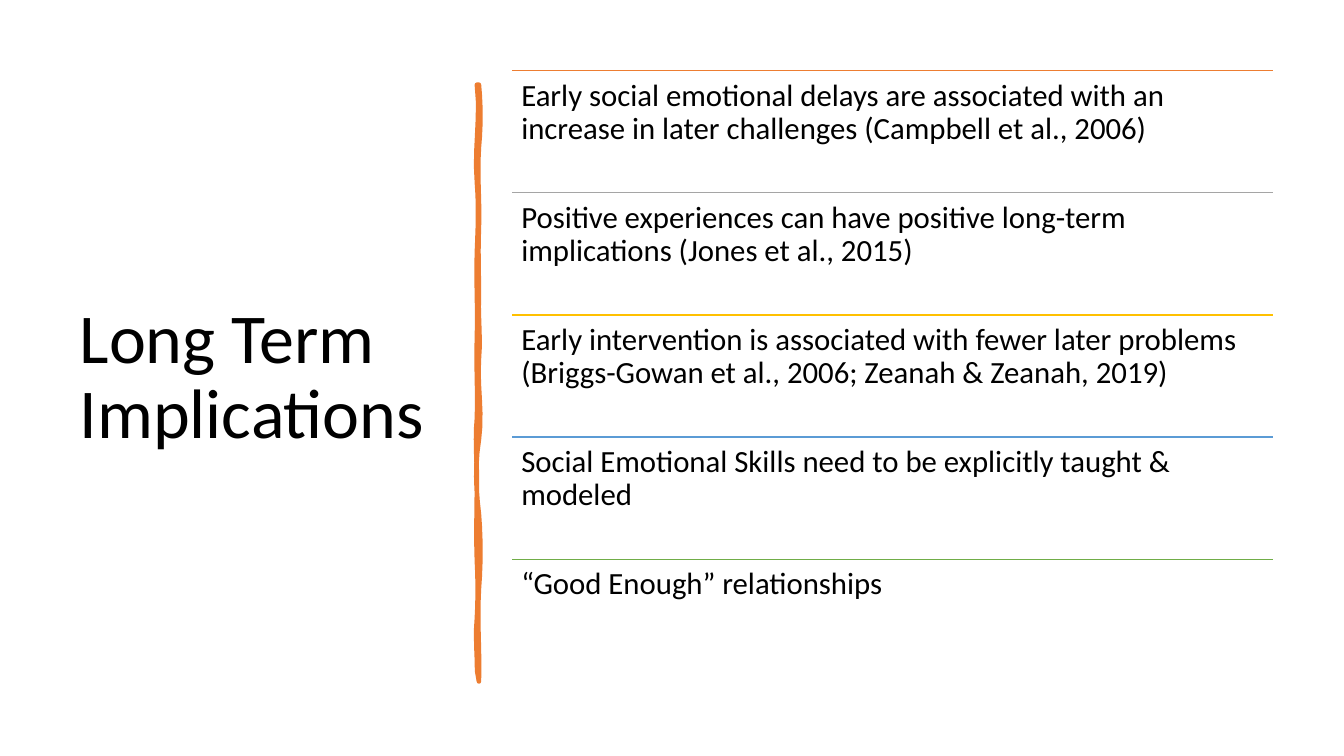
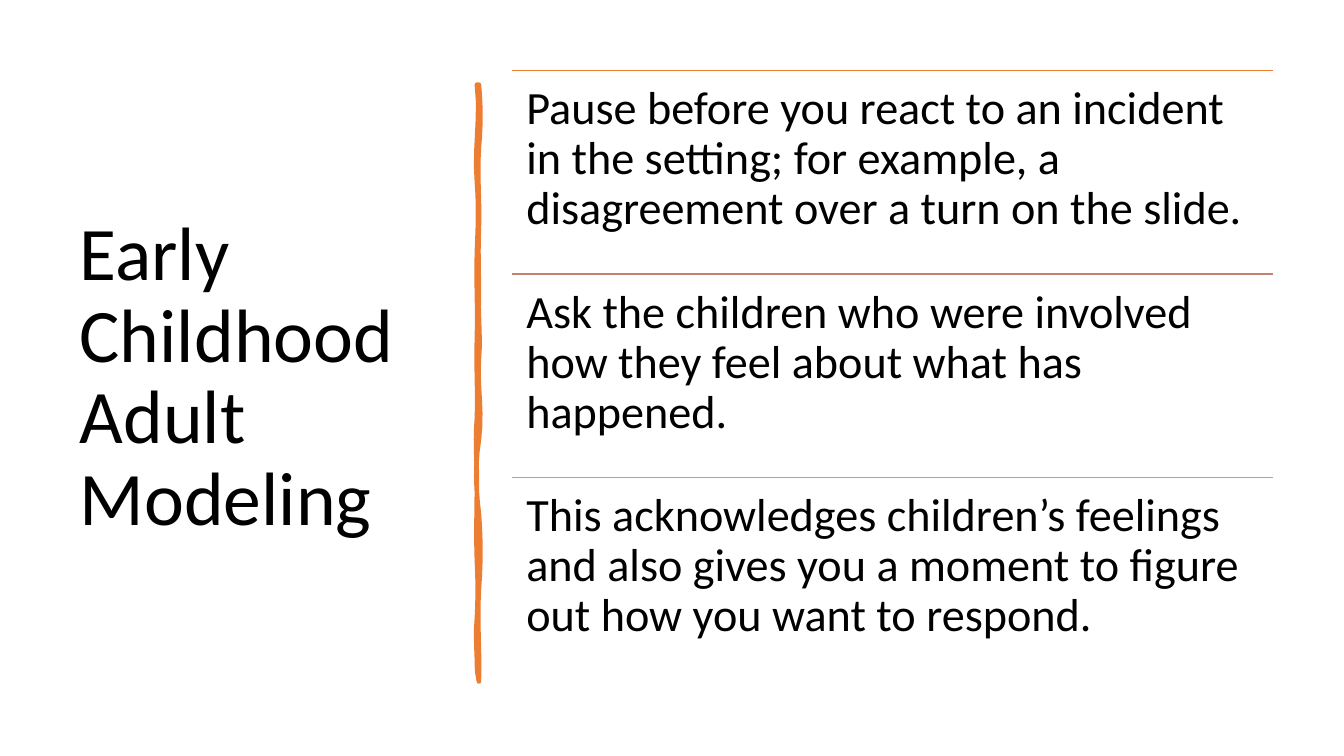
from lxml.etree import SubElement
from pptx import Presentation
from pptx.dml.color import RGBColor
from pptx.enum.shapes import MSO_CONNECTOR
from pptx.enum.text import MSO_ANCHOR, MSO_AUTO_SIZE, PP_ALIGN
from pptx.oxml.ns import qn
from pptx.util import Inches, Pt

FONT = "Calibri"
BLACK = "000000"
ORANGE = "ED7D31"
GRAY = "A5A5A5"
TITLE_BOX = (0.69, 0.7, 3.74, 6.11)
BRUSH_BOX = (4.73, 0.84, 0.02, 5.92)
LIST_BOX = (5.08, 0.7, 7.55, 6.06)
CURVE_STEPS = 6
RIGHT_EDGE = [
    (0.62, 0.02, 0.02), (1.42, -0.02, 0.01), (2.1, -0.01, 0), (2.72, -0.01, 0.02),
    (3.52, -0.02, 0.04), (4.26, -0.04, -0.03), (5, 0.02, 0.02), (5.92, -0.02, 0.01),
]
LEFT_EDGE = [
    (5.29, 0.01, -0.02), (4.73, 0.01, 0.01), (3.93, -0.01, 0), (3.31, 0, -0.02),
    (2.51, 0.01, -0.01), (1.66, 0.01, -0.01), (0.97, 0.01, 0.02), (0, -0.03, 0.04),
]
SLIDES = [
    {
        "title": "Long Term Implications",
        "title_size": 50,
        "text_size": 22,
        "inset": 0.09,
        "rows": [
            (ORANGE, "Early social emotional delays are associated with an increase in later challenges (Campbell et al., 2006)"),
            (GRAY, "Positive experiences can have positive long-term implications (Jones et al., 2015)"),
            ("FFC000", "Early intervention is associated with fewer later problems (Briggs-Gowan et al., 2006; Zeanah & Zeanah, 2019)"),
            ("5B9BD5", "Social Emotional Skills need to be explicitly taught & modeled"),
            ("70AD47", "“Good Enough” relationships"),
        ],
    },
    {
        "title": "Early Childhood Adult Modeling",
        "title_size": 54,
        "text_size": 33,
        "inset": 0.14,
        "rows": [
            (ORANGE, "Pause before you react to an incident in the setting; for example, a disagreement over a turn on the slide."),
            ("C48170", "Ask the children who were involved how they feel about what has happened."),
            (GRAY, "This acknowledges children’s feelings and also gives you a moment to figure out how you want to respond."),
        ],
    },
]


def color(hex_value):
    """Turn a hex string into a colour."""
    return RGBColor.from_string(hex_value)


def set_attributes(target, values):
    """Set each named attribute of the target."""
    for name, value in values.items():
        setattr(target, name, value)


def write_text(shape, text, size, anchor, inset):
    """Write one left-aligned paragraph into a shape."""
    frame = shape.text_frame
    frame.text = text
    set_attributes(frame, {
        "word_wrap": True,
        "auto_size": MSO_AUTO_SIZE.NONE,
        "vertical_anchor": anchor,
        "margin_left": Inches(inset),
        "margin_top": Inches(inset),
        "margin_right": Inches(inset),
        "margin_bottom": Inches(inset),
    })
    paragraph = frame.paragraphs[0]
    set_attributes(paragraph, {"alignment": PP_ALIGN.LEFT, "line_spacing": 0.9})
    font = paragraph.runs[0].font
    set_attributes(font, {"name": FONT, "size": Pt(size)})
    font.color.rgb = color(BLACK)


def place_title(slide, box, text, size):
    """Move the title placeholder into the box and fill it."""
    title = slide.shapes.title
    sides = ("left", "top", "width", "height")
    set_attributes(title, dict(zip(sides, map(Inches, box))))
    write_text(title, text, size, MSO_ANCHOR.MIDDLE, 0.1)


def trace_edge(left, top, start, edge):
    """Return points along a wavy vertical edge of (end, bulge, bulge) curves."""
    points = []
    for end, first_bulge, second_bulge in edge:
        for step in range(1, CURVE_STEPS + 1):
            part = step / CURVE_STEPS
            rest = 1 - part
            bulge = 3 * rest * part * (rest * first_bulge + part * second_bulge)
            points.append((Inches(left + bulge), Inches(top + start + (end - start) * part)))
        start = end
    return points


def draw_brush_stroke(slide, box):
    """Draw the wavy vertical stroke inside the box."""
    left, top, width, height = box
    right = left + width
    builder = slide.shapes.build_freeform(Inches(right), Inches(top))
    outline = trace_edge(right, top, 0, RIGHT_EDGE) + trace_edge(left, top, height, LEFT_EDGE)
    builder.add_line_segments(outline, close=True)
    stroke = builder.convert_to_shape()
    stroke.shadow.inherit = False
    stroke.fill.solid()
    stroke.fill.fore_color.rgb = color(ORANGE)
    stroke.line.color.rgb = color(ORANGE)
    stroke.line.width = Pt(3.25)
    SubElement(stroke.line._get_or_add_ln(), qn("a:round"))


def draw_rule(slide, left, top, width, hex_value):
    """Draw a thin horizontal line."""
    rule = slide.shapes.add_connector(
        MSO_CONNECTOR.STRAIGHT, Inches(left), Inches(top), Inches(left + width), Inches(top))
    rule.line.color.rgb = color(hex_value)
    rule.line.width = Pt(1)
    SubElement(rule._element.spPr, qn("a:effectLst"))


def draw_ruled_list(slide, box, rows, size, inset):
    """Share the box equally among rows, each under a coloured line."""
    left, top, width, height = box
    row_height = height / len(rows)
    for index, (hex_value, text) in enumerate(rows):
        row_top = top + index * row_height
        draw_rule(slide, left, row_top, width, hex_value)
        text_box = slide.shapes.add_textbox(
            Inches(left), Inches(row_top), Inches(width), Inches(row_height))
        write_text(text_box, text, size, MSO_ANCHOR.TOP, inset)


def add_list_slide(presentation, content):
    """Add a slide with a title, a brush stroke and a ruled list."""
    slide = presentation.slides.add_slide(presentation.slide_layouts[5])
    place_title(slide, TITLE_BOX, content["title"], content["title_size"])
    draw_brush_stroke(slide, BRUSH_BOX)
    draw_ruled_list(slide, LIST_BOX, content["rows"], content["text_size"], content["inset"])


def main():
    """Build and save the presentation."""
    presentation = Presentation()
    set_attributes(presentation, {"slide_width": Inches(13.33), "slide_height": Inches(7.5)})
    for content in SLIDES:
        add_list_slide(presentation, content)
    presentation.save("out.pptx")


if __name__ == "__main__":
    main()
